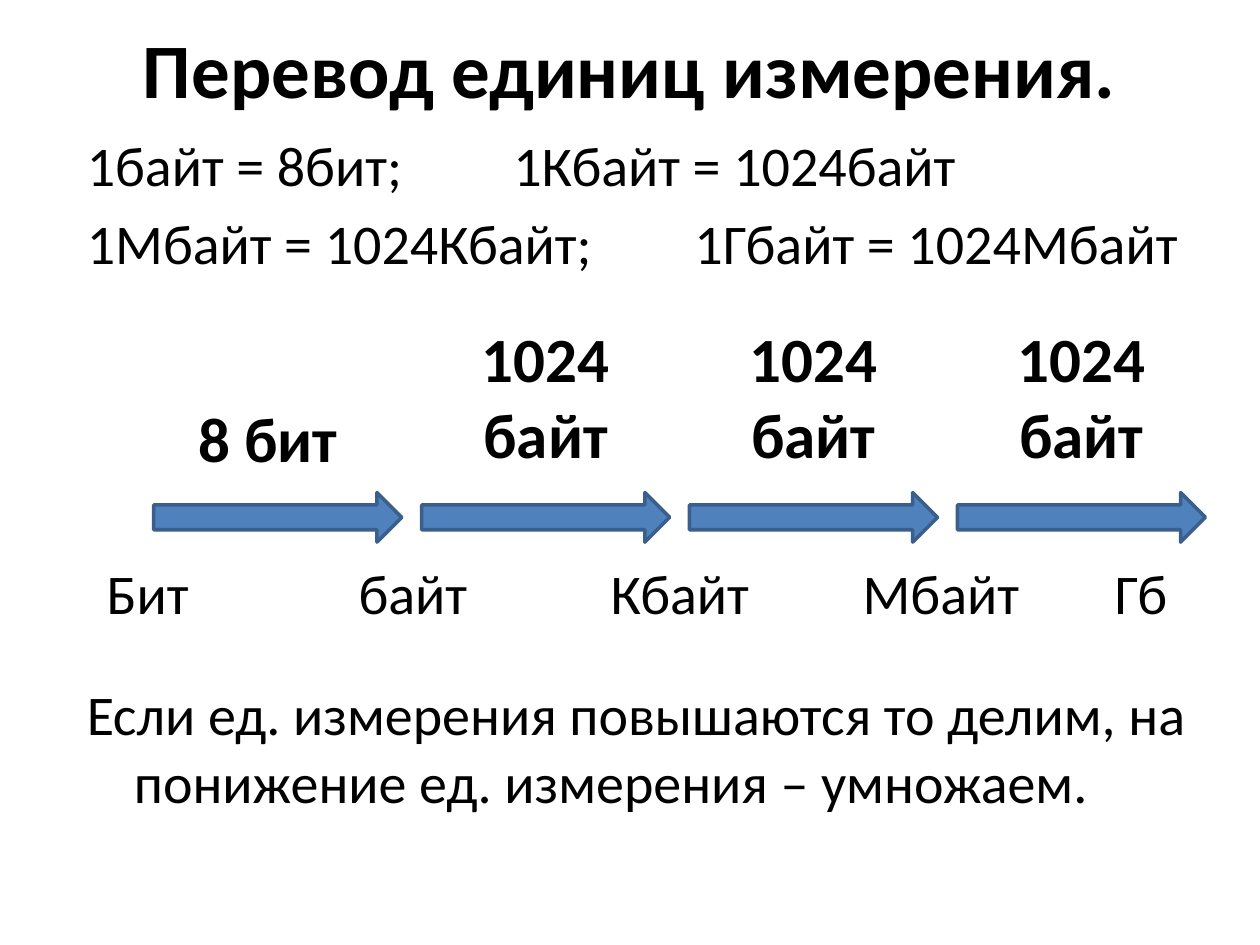
from dataclasses import dataclass

from lxml import etree
from pptx import Presentation
from pptx.dml.color import RGBColor
from pptx.enum.shapes import MSO_SHAPE
from pptx.enum.text import MSO_ANCHOR, PP_ALIGN
from pptx.oxml.ns import qn
from pptx.util import Cm, Pt

ARROW = MSO_SHAPE.RIGHT_ARROW
MIDDLE = MSO_ANCHOR.MIDDLE
CENTER, LEFT = PP_ALIGN.CENTER, PP_ALIGN.LEFT
TITLE_ONLY = 5


@dataclass(frozen=True)
class Theme:
    font: str = "Calibri"
    text: RGBColor = RGBColor(0x00, 0x00, 0x00)
    fill: RGBColor = RGBColor(0x4F, 0x81, 0xBD)
    line: RGBColor = RGBColor(0x3A, 0x5F, 0x8C)
    title_size: int = 44
    factor_size: int = 36
    body_size: int = 32


class SlideBuilder:
    def __init__(self, slide, theme):
        self.slide, self.theme = slide, theme

    def add_text(self, p, text, size, bold=False, align=LEFT):
        p.alignment = align
        r = p.add_run()
        r.text = text
        style = {"name": self.theme.font, "size": Pt(size), "bold": bold}
        for name, value in style.items():
            setattr(r.font, name, value)
        r.font.color.rgb = self.theme.text

    def title(self, text, left, top, width, height):
        sp = self.slide.shapes.title
        place = {"left": left, "top": top, "width": width, "height": height}
        for name, value in place.items():
            setattr(sp, name, Cm(value))
        tf = sp.text_frame
        tf.vertical_anchor = MIDDLE
        self.add_text(tf.paragraphs[0], text, self.theme.title_size, True, CENTER)

    def text_box(self, left, top, width, height):
        sp = self.slide.shapes.add_textbox(Cm(left), Cm(top), Cm(width), Cm(height))
        sp.text_frame.word_wrap = True
        return sp.text_frame

    def tab_stops(self, p, stops):
        tabs = etree.SubElement(p._p.get_or_add_pPr(), qn("a:tabLst"))
        for stop in stops:
            etree.SubElement(tabs, qn("a:tab"), pos=str(Cm(stop)), algn="l")

    def arrow(self, left, top, width, height):
        sp = self.slide.shapes.add_shape(ARROW, Cm(left), Cm(top), Cm(width), Cm(height))
        sp.shadow.inherit = False
        sp.fill.solid()
        sp.fill.fore_color.rgb = self.theme.fill
        sp.line.color.rgb = self.theme.line
        sp.line.width = Pt(2)


def main():
    prs = Presentation()
    prs.slide_width, prs.slide_height = Cm(25.4), Cm(19.05)
    theme = Theme()
    s = SlideBuilder(prs.slides.add_slide(prs.slide_layouts[TITLE_ONLY]), theme)

    s.title("Перевод единиц измерения.", 1.27, 0, 22.86, 2.72)

    # Formulas, then the rule below the diagram: text, tab stop, space before
    tf = s.text_box(1.5, 2.51, 22.86, 15.4)
    lines = [
        ("1байт = 8бит;\t1Кбайт = 1024байт", 8.6, 6),
        ("1Мбайт = 1024Кбайт;\t1Гбайт = 1024Мбайт", 12.25, 6),
        ("Если ед. измерения повышаются то делим, на понижение ед. измерения – умножаем.",
         None, 231),
    ]
    for i, (text, stop, before) in enumerate(lines):
        p = tf.add_paragraph() if i else tf.paragraphs[0]
        s.add_text(p, text, theme.body_size)
        p.space_before = Pt(before)
        if stop:
            s.tab_stops(p, [stop])
    # Hanging indent for the wrapped rule
    pPr = p._p.get_or_add_pPr()
    pPr.set("marL", str(Cm(0.95)))
    pPr.set("indent", str(Cm(-0.95)))

    # Conversion arrows with a factor above each: text, shift, top, height
    factors = [("8 бит", 0, 7.92, 1.8)] + [("1024 байт", 0.2, 6.32, 3.33)] * 3
    for i, (text, shift, top, height) in enumerate(factors):
        left = 3.1 + 5.4 * i
        s.arrow(left, 9.93, 5, 1)
        tf = s.text_box(left + shift, top, 4.6, height)
        s.add_text(tf.paragraphs[0], text, theme.factor_size, True, CENTER)

    # Units below the arrows, at equal tab stops
    units = ["Бит", "байт", "Кбайт", "Мбайт", "Гб"]
    p = s.text_box(1.9, 11.13, 23, 1.62).paragraphs[0]
    s.add_text(p, "\t".join(units), theme.body_size)
    s.tab_stops(p, [5.08 * i for i in range(1, len(units))])

    prs.save("out.pptx")


if __name__ == "__main__":
    main()
